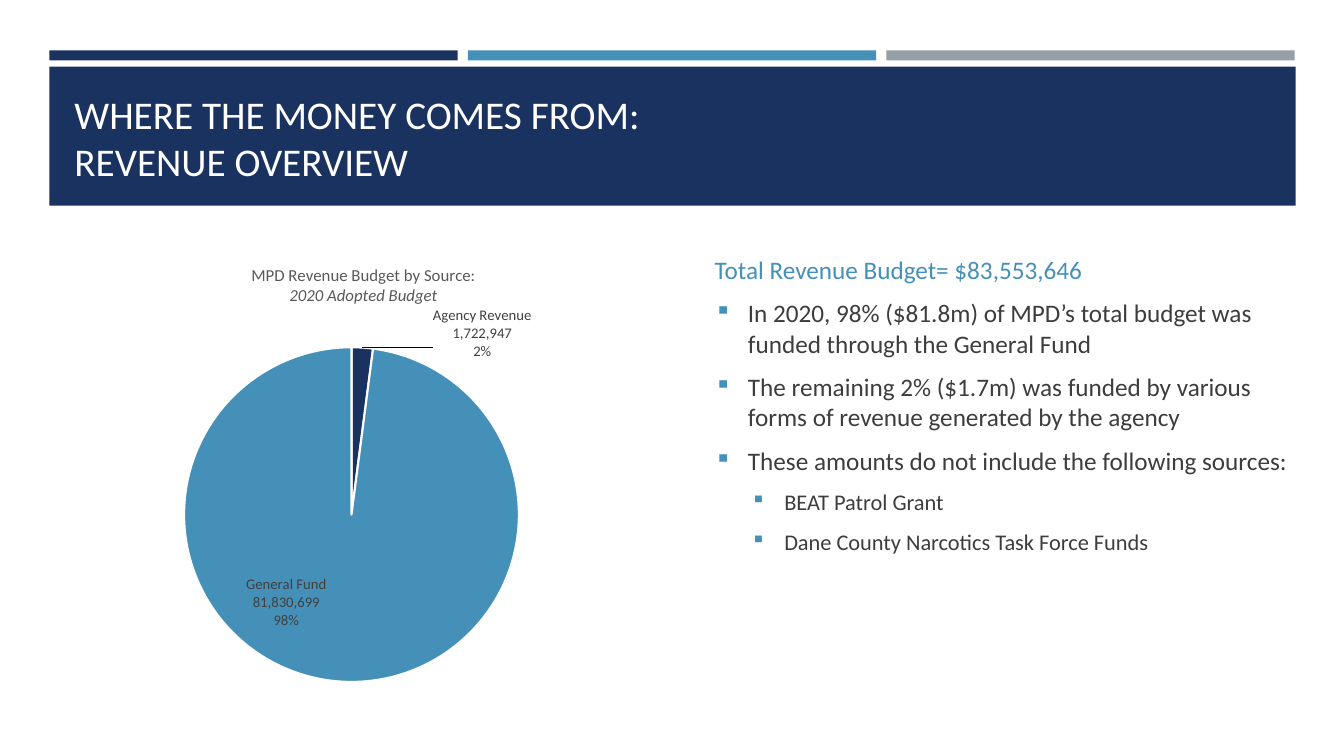
from dataclasses import dataclass

from pptx import Presentation
from pptx.chart.data import CategoryChartData
from pptx.dml.color import RGBColor
from pptx.enum.chart import XL_CHART_TYPE, XL_LABEL_POSITION
from pptx.enum.shapes import MSO_SHAPE
from pptx.enum.text import MSO_ANCHOR
from pptx.oxml import parse_xml
from pptx.oxml.ns import nsdecls
from pptx.util import Inches, Pt

RECT = MSO_SHAPE.RECTANGLE
PIE = XL_CHART_TYPE.PIE
OUTER = XL_LABEL_POSITION.OUTSIDE_END
CENTER = XL_LABEL_POSITION.CENTER
TOP, BOTTOM = MSO_ANCHOR.TOP, MSO_ANCHOR.BOTTOM

NAVY = RGBColor(0x1A, 0x32, 0x60)
BLUE = RGBColor(0x45, 0x90, 0xB8)
GRAY = RGBColor(0x96, 0x9F, 0xA7)
WHITE = RGBColor(0xFF, 0xFF, 0xFF)
INK = RGBColor(0x3D, 0x3D, 0x3D)
LABEL = RGBColor(0x40, 0x40, 0x40)
HEAD = RGBColor(0x59, 0x59, 0x59)
FONT = "Calibri"


@dataclass
class Box:
    left: float
    top: float
    width: float
    height: float

    def place(self):
        return [Inches(n) for n in (self.left, self.top, self.width, self.height)]


@dataclass
class Line:
    text: str
    size: float = 18
    color: RGBColor = INK
    indent: float = 0
    italic: bool = False


@dataclass
class Slice:
    name: str
    value: int
    color: RGBColor
    spot: XL_LABEL_POSITION
    dx: float
    dy: float


BARS = [NAVY, BLUE, GRAY]
TITLE = [Line("WHERE THE MONEY COMES FROM:", 28, WHITE),
         Line("REVENUE OVERVIEW", 28, WHITE)]
BODY = [
    Line("Total Revenue Budget= $83,553,646", color=BLUE),
    Line("In 2020, 98% ($81.8m) of MPD’s total budget was funded through the General Fund",
         indent=0.33),
    Line("The remaining 2% ($1.7m) was funded by various forms of revenue generated by the agency",
         indent=0.33),
    Line("These amounts do not include the following sources:", indent=0.33),
    Line("BEAT Patrol Grant", 16, indent=0.69),
    Line("Dane County Narcotics Task Force Funds", 16, indent=0.69),
]
HEADING = [Line("MPD Revenue Budget by Source:", 12, HEAD),
           Line("2020 Adopted Budget", 12, HEAD, italic=True)]
SLICES = [Slice("Agency Revenue", 1722947, NAVY, OUTER, 0.2, 0.04),
          Slice("General Fund", 81830699, BLUE, CENTER, -0.1, 0.01)]


def style(font, *, size: float, color: RGBColor, italic: bool = False) -> None:
    font.name, font.size, font.italic, font.bold = FONT, Pt(size), italic, False
    font.color.rgb = color


def bullet(para, indent: float) -> None:
    props = para._p.get_or_add_pPr()
    props.set("marL", str(Inches(indent)))
    props.set("indent", str(Inches(-0.33)))
    for xml in (f'<a:buClr {nsdecls("a")}><a:srgbClr val="{BLUE}"/></a:buClr>',
                f'<a:buSzPct {nsdecls("a")} val="92000"/>',
                f'<a:buChar {nsdecls("a")} char="▪"/>'):
        props.append(parse_xml(xml))


def write(frame, lines: list[Line], *, gap: bool = False) -> None:
    for i, line in enumerate(lines):
        para = frame.add_paragraph() if i else frame.paragraphs[0]
        run = para.add_run()
        run.text = line.text
        style(run.font, size=line.size, color=line.color, italic=line.italic)
        if gap:
            para.space_before, para.space_after = Pt(line.size * 0.2), Pt(6)
        if line.indent:
            para.level = int(line.indent > 0.5)
            bullet(para, line.indent)


def add_text(slide, box: Box, lines: list[Line], *, anchor=TOP, gap: bool = False) -> None:
    frame = slide.shapes.add_textbox(*box.place()).text_frame
    frame.word_wrap = True
    frame.vertical_anchor = anchor
    write(frame, lines, gap=gap)


def add_bar(slide, box: Box, color: RGBColor) -> None:
    bar = slide.shapes.add_shape(RECT, *box.place())
    bar.shadow.inherit = False
    bar.fill.solid()
    bar.fill.fore_color.rgb = color
    bar.line.fill.background()


def layout(x: float, y: float, extra: str = ""):
    return parse_xml(f'<c:layout {nsdecls("c")}><c:manualLayout>{extra}'
                     f'<c:x val="{x}"/><c:y val="{y}"/></c:manualLayout></c:layout>')


def add_pie(slide, box: Box) -> None:
    data = CategoryChartData(number_format="#,##0")
    data.categories = [s.name for s in SLICES]
    data.add_series("Series 1", [s.value for s in SLICES])
    chart = slide.shapes.add_chart(PIE, *box.place(), data).chart
    style(chart.font, size=10, color=LABEL)
    chart.has_legend = False
    chart.has_title = True
    write(chart.chart_title.text_frame, HEADING)
    chart.chart_title.include_in_layout = False
    plot = chart.plots[0]
    plot.vary_by_categories = True
    series = plot.series[0]

    # Labels for the whole series
    labels = series.data_labels
    style(labels.font, size=10.5, color=LABEL)
    labels.show_value = labels.show_percentage = labels.show_category_name = True

    # Slice colours and label spots
    for i, fund in enumerate(SLICES):
        point = series.points[i]
        point.format.fill.solid()
        point.format.fill.fore_color.rgb = fund.color
        point.format.line.color.rgb = WHITE
        point.format.line.width = Pt(1.5)
        style(point.data_label.font, size=10.5, color=LABEL)
        point.data_label.position = fund.spot

    space = chart.element
    for fund, node in zip(SLICES, space.xpath(".//c:ser/c:dLbls/c:dLbl")):
        node.xpath("c:idx")[0].addnext(layout(fund.dx, fund.dy))
        for flag in node.xpath("c:showVal | c:showCatName | c:showPercent"):
            flag.set("val", "1")
    for last in space.xpath(".//c:ser//c:showBubbleSize"):
        last.addnext(parse_xml(f'<c:separator {nsdecls("c")}>\n</c:separator>'))

    # Fixed pie area
    area = space.xpath(".//c:plotArea")[0]
    for old in area.xpath("c:layout"):
        area.remove(old)
    frame = layout(0.2, 0.21, '<c:layoutTarget val="inner"/>'
                              '<c:xMode val="edge"/><c:yMode val="edge"/>')
    for tag, val in (("w", 0.56), ("h", 0.7)):
        frame[0].append(parse_xml(f'<c:{tag} {nsdecls("c")} val="{val}"/>'))
    area.insert(0, frame)


def main() -> None:
    deck = Presentation()
    deck.slide_width, deck.slide_height = Inches(13.33), Inches(7.5)
    slide = deck.slides.add_slide(deck.slide_layouts[6])

    # Header
    for i, color in enumerate(BARS):
        add_bar(slide, Box(0.49 + 4.15 * i, 0.5, 4.05, 0.1), color)
    add_bar(slide, Box(0.49, 0.66, 12.36, 1.38), NAVY)
    add_text(slide, Box(0.64, 0.8, 12.06, 1.08), TITLE, anchor=BOTTOM)

    # Content
    add_pie(slide, Box(0.64, 2.44, 5.93, 4.76))
    add_text(slide, Box(6.99, 2.47, 5.93, 3.97), BODY, gap=True)
    deck.save("out.pptx")


if __name__ == "__main__":
    main()
